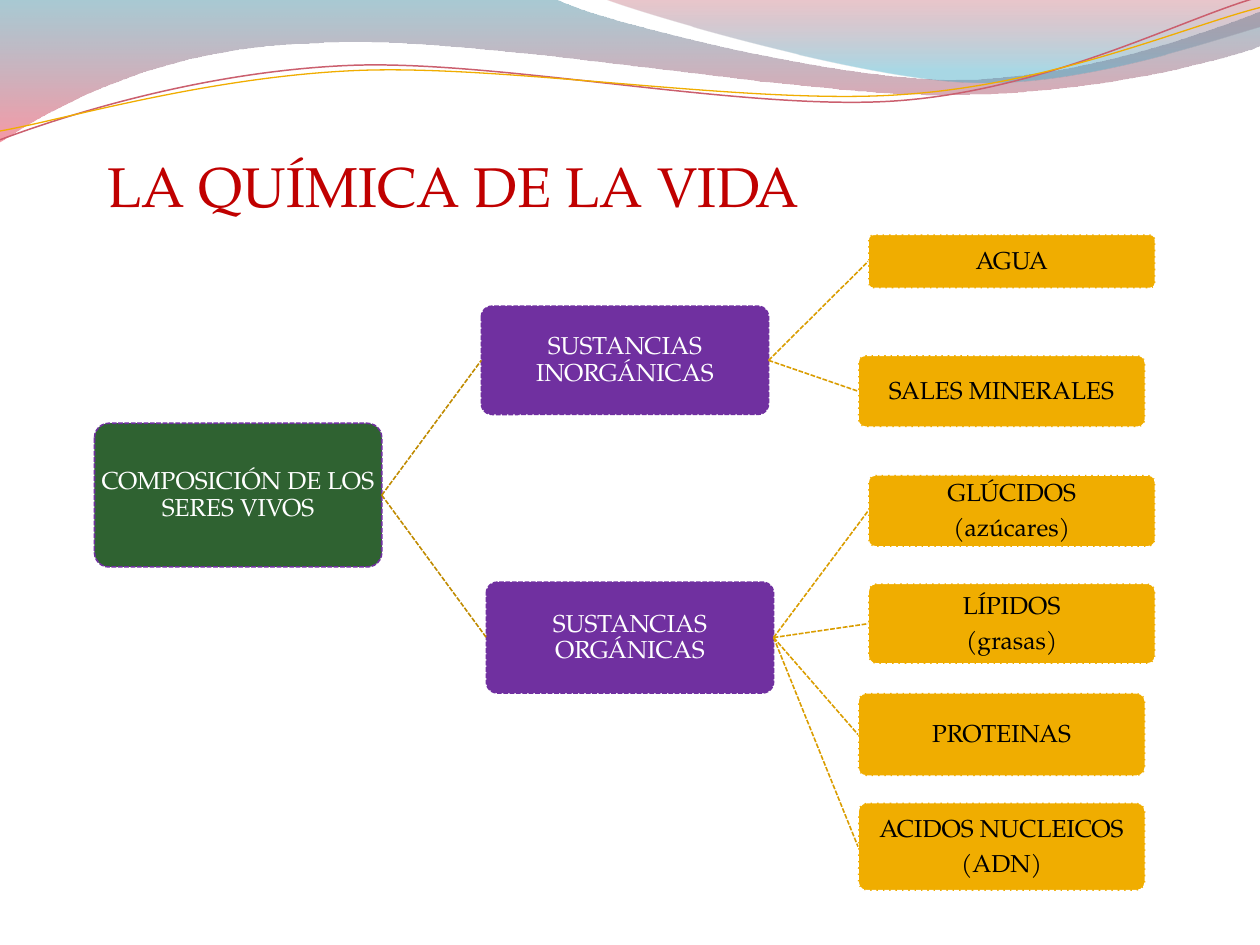
from lxml import etree
from pptx import Presentation
from pptx.dml.color import RGBColor
from pptx.enum.dml import MSO_LINE
from pptx.enum.shapes import MSO_CONNECTOR, MSO_SHAPE
from pptx.enum.text import MSO_ANCHOR, MSO_AUTO_SIZE, PP_ALIGN
from pptx.oxml.ns import qn
from pptx.util import Inches, Pt

FONT = "TeX Gyre Pagella"
RIGHT_SIDE, LEFT_SIDE = 3, 1
BOX_WIDTH = 2.28

# Level styles: fill, border, text
ROOT = ("2F6231", "7030A0", "FFFFFF")
BRANCH = ("7030A0", "7030A0", "FFFFFF")
LEAF = ("F0AD00", "FFFFFF", "000000")

# Each branch: text, (left, top, height), leaves in the same form
BRANCHES = [
    ("SUSTANCIAS INORGÁNICAS", (3.82, 2.43, 0.86), [
        (["AGUA"], (6.89, 1.86, 0.43)),
        (["SALES MINERALES"], (6.81, 2.82, 0.57)),
    ]),
    ("SUSTANCIAS ORGÁNICAS", (3.86, 4.62, 0.88), [
        (["GLÚCIDOS", "(azúcares)"], (6.89, 3.77, 0.57)),
        (["LÍPIDOS", "(grasas)"], (6.89, 4.63, 0.64)),
        (["PROTEINAS"], (6.81, 5.5, 0.66)),
        (["ACIDOS NUCLEICOS", "(ADN)"], (6.81, 6.37, 0.7)),
    ]),
]


def color(hex_string):
    return RGBColor.from_string(hex_string)


def add_run(paragraph, text, size, hex_string):
    run = paragraph.add_run()
    run.text = text
    run.font.name = FONT
    run.font.size = Pt(size)
    run.font.color.rgb = color(hex_string)


def add_curve(slide, segments, close):
    """Draw line segments (2 numbers) and Bézier segments (6 numbers)."""
    points = [(Inches(segment[i]), Inches(segment[i + 1]))
              for segment in segments for i in range(0, len(segment), 2)]
    builder = slide.shapes.build_freeform(*points[0], scale=1.0)
    builder.add_line_segments(points[1:], close=close)
    shape = builder.convert_to_shape()
    shape.shadow.inherit = False

    # Merge the three lines of each Bézier segment into one curve
    lines = iter(list(shape._element.spPr.iter(qn("a:lnTo"))))
    for segment in segments[1:]:
        first = next(lines)
        if len(segment) == 6:
            first.tag = qn("a:cubicBezTo")
            for _ in range(2):
                line = next(lines)
                first.append(line[0])
                line.getparent().remove(line)
    return shape


def add_wave(slide, segments, stops):
    """Filled wave; stops are (position, colour, opacity percent)."""
    shape = add_curve(slide, segments, close=True)
    shape.line.fill.background()
    shape.fill.gradient()
    shape.fill.gradient_angle = 270
    for gradient_stop, (position, hex_string, _) in zip(shape.fill.gradient_stops, stops):
        gradient_stop.position = position
        gradient_stop.color.rgb = color(hex_string)
    elements = shape._element.spPr.iter(qn("a:srgbClr"))
    for element, (_, _, opacity) in zip(list(elements), stops):
        etree.SubElement(element, qn("a:alpha"), val=str(opacity * 1000))


def add_ribbon(slide, segments, hex_string, width):
    shape = add_curve(slide, segments, close=False)
    shape.fill.background()
    shape.line.color.rgb = color(hex_string)
    shape.line.width = Pt(width)


def add_header_waves(slide):
    add_wave(slide, [
        (0, 0), (4.4, -0.01),
        (4.76, 0.17, 6.64, 0.63, 7.58, 0.63), (8.53, 0.63, 9.58, 0.26, 10, 0.09),
        (10.01, 0.36),
        (9.83, 0.44, 8.7, 0.76, 7.46, 0.75), (6.22, 0.75, 3.82, 0.28, 2.57, 0.34),
        (1.29, 0.36, 0.46, 0.83, -0.01, 1.13),
    ], [(0, "3F8A9F", 45), (1, "EF445B", 55)])
    add_wave(slide, [
        (4.79, -0.01), (5.09, 0.11, 6.82, 0.62, 7.69, 0.65),
        (8.56, 0.69, 9.61, 0.32, 10, 0.21), (10, 0),
    ], [(0, "B84253", 30), (0.8, "42ABC7", 45)])
    add_ribbon(slide, [
        (0, 1.11), (0.48, 0.93, 1.58, 0.57, 2.77, 0.52),
        (3.95, 0.47, 5.93, 0.89, 7.13, 0.8), (8.33, 0.71, 9.38, 0.15, 9.98, -0.02),
    ], "CB5F6E", 0.85)
    add_ribbon(slide, [
        (0, 1.04), (0.47, 0.96, 1.64, 0.61, 2.83, 0.56),
        (4.03, 0.51, 5.97, 0.84, 7.17, 0.75), (8.36, 0.67, 9.41, 0.21, 10, 0.06),
    ], "F0AD00", 0.75)


def add_title(slide, left, top, width, height):
    title = slide.shapes.title
    title.left, title.top = Inches(left), Inches(top)
    title.width, title.height = Inches(width), Inches(height)
    text_frame = title.text_frame
    text_frame.auto_size = MSO_AUTO_SIZE.SHAPE_TO_FIT_TEXT
    text_frame.vertical_anchor = MSO_ANCHOR.TOP
    paragraph = text_frame.paragraphs[0]
    paragraph.alignment = PP_ALIGN.LEFT
    add_run(paragraph, "LA QUÍMICA DE LA VIDA", 32, "C00000")


def dash(line, hex_string):
    line.color.rgb = color(hex_string)
    line.width = Pt(0.9)
    line.dash_style = MSO_LINE.SQUARE_DOT


def add_box(slide, lines, place, style):
    left, top, height = place
    fill, border, text_color = style
    shape = slide.shapes.add_shape(
        MSO_SHAPE.ROUNDED_RECTANGLE,
        Inches(left), Inches(top), Inches(BOX_WIDTH), Inches(height))
    shape.adjustments[0] = 0.1
    shape.shadow.inherit = False
    shape.fill.solid()
    shape.fill.fore_color.rgb = color(fill)
    dash(shape.line, border)
    text_frame = shape.text_frame
    text_frame.word_wrap = True
    text_frame.vertical_anchor = MSO_ANCHOR.MIDDLE
    text_frame.margin_left = text_frame.margin_right = Inches(0.01)
    text_frame.margin_top = text_frame.margin_bottom = Inches(0.01)
    for index, text in enumerate(lines):
        paragraph = text_frame.add_paragraph() if index else text_frame.paragraphs[0]
        paragraph.alignment = PP_ALIGN.CENTER
        paragraph.line_spacing = 0.9
        paragraph.space_after = Pt(4.9)
        add_run(paragraph, text, 14, text_color)
    return shape


def join(slide, parent, child, hex_string):
    connector = slide.shapes.add_connector(MSO_CONNECTOR.STRAIGHT, 0, 0, 0, 0)
    connector.begin_connect(parent, RIGHT_SIDE)
    connector.end_connect(child, LEFT_SIDE)
    dash(connector.line, hex_string)
    etree.SubElement(connector._element.spPr, qn("a:effectLst"))


def add_tree(slide, root_place):
    root = add_box(slide, ["COMPOSICIÓN DE LOS SERES VIVOS"], root_place, ROOT)
    for text, place, leaves in BRANCHES:
        branch = add_box(slide, [text], place, BRANCH)
        join(slide, root, branch, "C08B00")
        for lines, leaf_place in leaves:
            leaf = add_box(slide, lines, leaf_place, LEAF)
            join(slide, branch, leaf, "DA9D00")


def main():
    presentation = Presentation()
    presentation.slide_width, presentation.slide_height = Inches(10), Inches(7.5)
    slide = presentation.slides.add_slide(presentation.slide_layouts[5])
    add_header_waves(slide)
    add_title(slide, 0.75, 1.15, 8.35, 0.64)
    add_tree(slide, (0.75, 3.36, 1.14))
    presentation.save("out.pptx")


if __name__ == "__main__":
    main()
